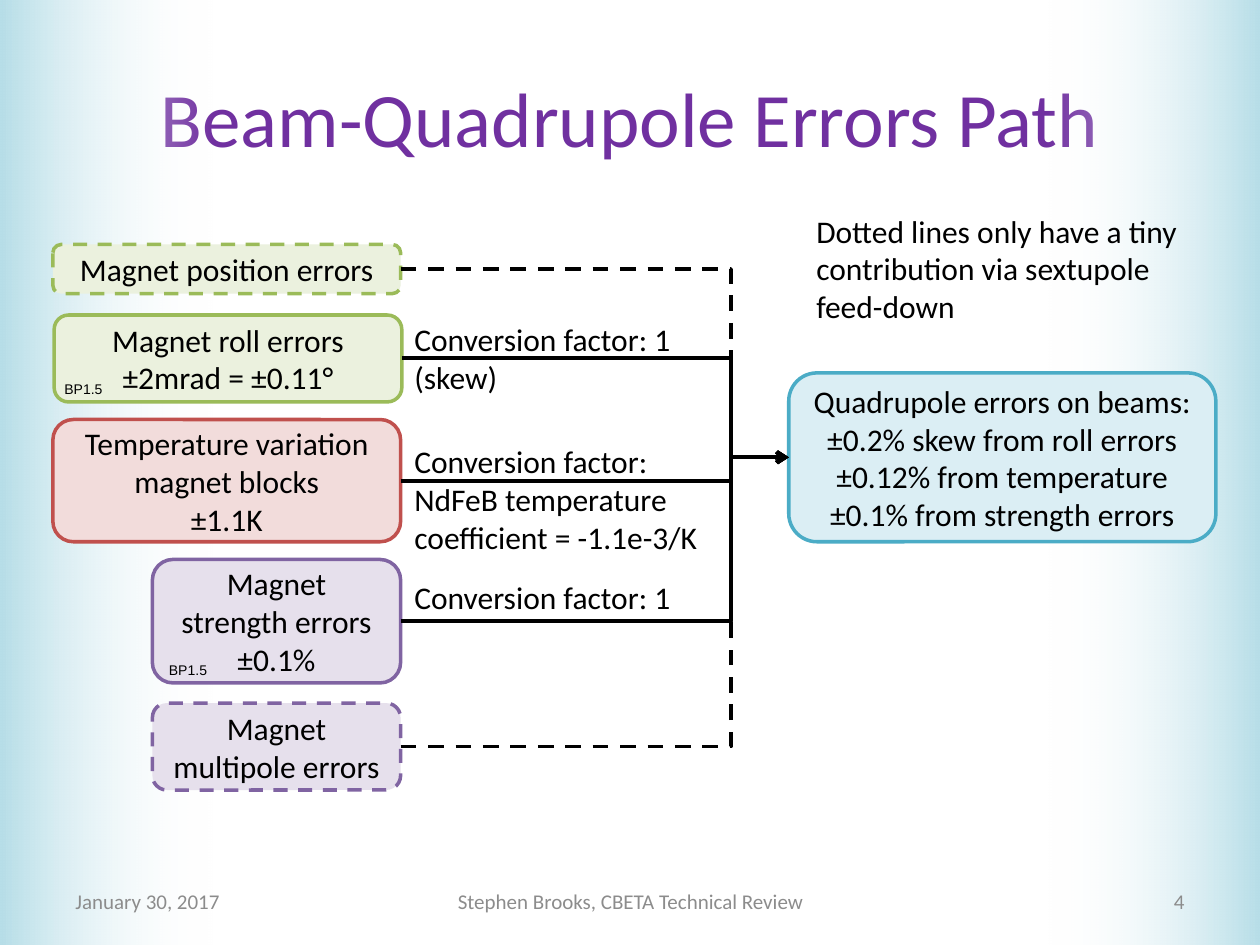
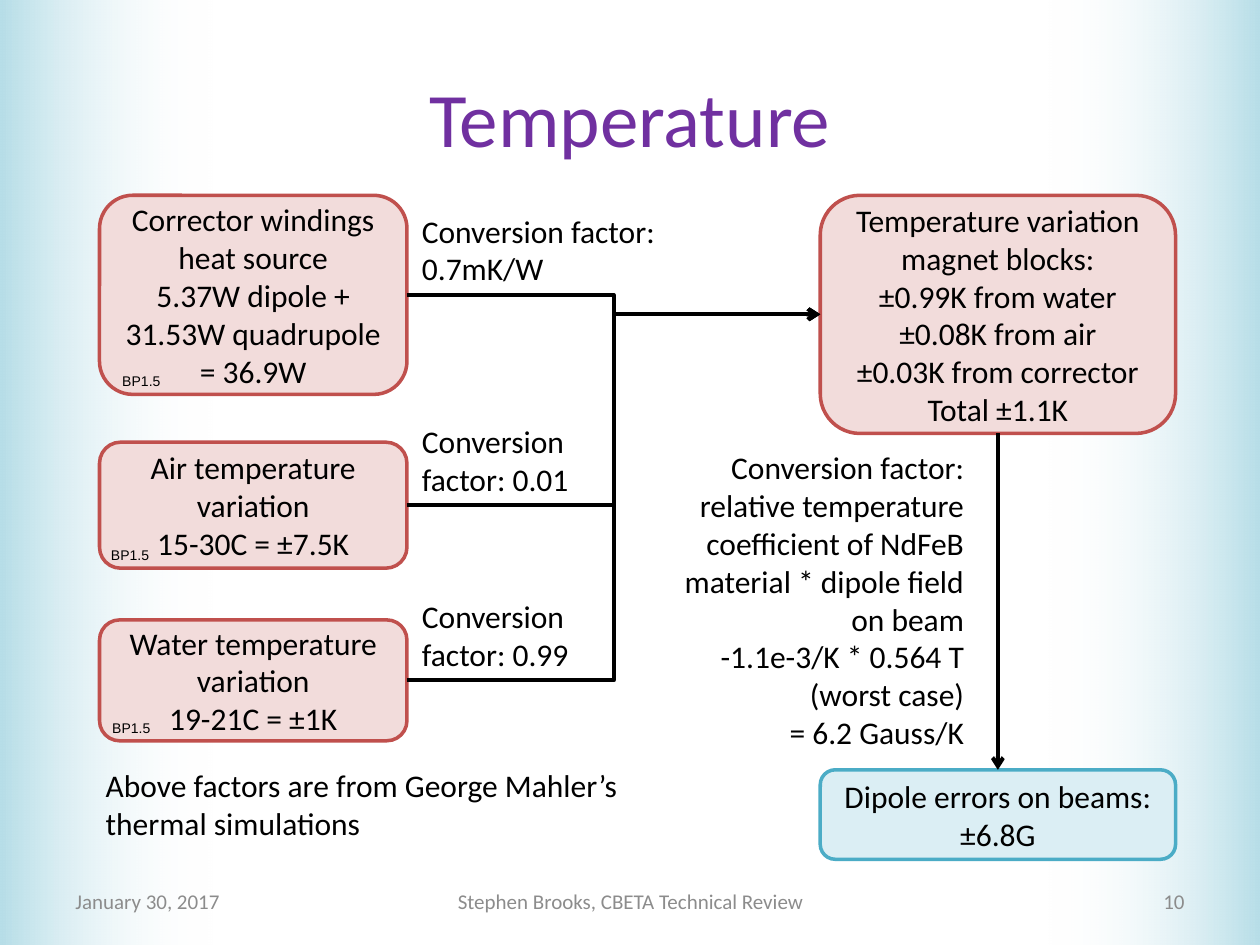
from lxml import etree
from pptx import Presentation
from pptx.dml.color import RGBColor
from pptx.enum import dml, shapes, text
from pptx.oxml import ns
from pptx.util import Inches, Pt

BLACK = RGBColor(0x00, 0x00, 0x00)
WHITE = RGBColor(0xFF, 0xFF, 0xFF)
PURPLE = RGBColor(0x70, 0x30, 0xA0)
GREY = RGBColor(0x8C, 0x8C, 0x8C)
BAND_BLUE = RGBColor(0xB7, 0xDE, 0xE8)
GREEN_PAIR = RGBColor(0xEB, 0xF1, 0xDE), RGBColor(0x9B, 0xBB, 0x59)
RED_PAIR = RGBColor(0xF2, 0xDC, 0xDB), RGBColor(0xC0, 0x50, 0x4D)
VIOLET_PAIR = RGBColor(0xE6, 0xE0, 0xEC), RGBColor(0x80, 0x64, 0xA2)
AQUA_PAIR = RGBColor(0xDB, 0xEE, 0xF4), RGBColor(0x4B, 0xAC, 0xC6)

LEFT, CENTER, RIGHT = text.PP_ALIGN.LEFT, text.PP_ALIGN.CENTER, text.PP_ALIGN.RIGHT
TOP_SITE, LEFT_SITE, BOTTOM_SITE, RIGHT_SITE = range(4)
BAND_WIDTH = 1.69
TAG_SIZE = 0.39, 0.21


def inches(box):
    """Turn a box in inches into lengths."""
    return [Inches(value) for value in box]


def write(frame, lines, size=18, align=LEFT, color=BLACK, font="Calibri"):
    """Fill a text frame with one paragraph for each line."""
    for index, line in enumerate(lines):
        para = frame.add_paragraph() if index else frame.paragraphs[0]
        para.alignment = align
        span = para.add_run()
        span.text = line
        span.font.size = Pt(size)
        span.font.name = font
        span.font.color.rgb = color


def add_band(page, left, rotation):
    """Draw a side band that fades towards the middle of the page."""
    band = page.shapes.add_shape(
        shapes.MSO_SHAPE.RECTANGLE, *inches((left, 0, BAND_WIDTH, 7.5)))
    band.rotation = rotation
    band.shadow.inherit = False
    band.line.fill.background()
    band.fill.gradient()
    band.fill.gradient_angle = 0
    for stop, color in zip(band.fill.gradient_stops, (BAND_BLUE, WHITE)):
        stop.color.rgb = color
    faded = list(band.element.iter(ns.qn("a:srgbClr")))[-1]
    etree.SubElement(faded, ns.qn("a:alpha"), val="0")


def add_label(page, box, lines, align=LEFT):
    """Place a free text label."""
    label = page.shapes.add_textbox(*inches(box))
    label.text_frame.word_wrap = True
    label.text_frame.auto_size = text.MSO_AUTO_SIZE.SHAPE_TO_FIT_TEXT
    write(label.text_frame, lines, align=align)


def add_footer(page, number):
    """Write the date, the event and the page number."""
    parts = ((0.5, 2.33, "January 30, 2017", LEFT),
             (3.42, 3.17, "Stephen Brooks, CBETA Technical Review", CENTER),
             (7.17, 2.33, str(number), RIGHT))
    for left, width, words, align in parts:
        footer = page.shapes.add_textbox(*inches((left, 6.95, width, 0.4)))
        footer.text_frame.word_wrap = True
        footer.text_frame.vertical_anchor = text.MSO_ANCHOR.MIDDLE
        write(footer.text_frame, [words], 12, align, GREY)


def add_page(deck, title, number):
    """Add a page with the shared bands, title and footer."""
    page = deck.slides.add_slide(deck.slide_layouts[5])
    add_band(page, 10 - BAND_WIDTH, 180)
    add_band(page, 0, 0)
    heading = page.shapes.title
    heading.left, heading.top, heading.width, heading.height = inches((0.5, 0.3, 9, 1.25))
    heading.text_frame.vertical_anchor = text.MSO_ANCHOR.MIDDLE
    write(heading.text_frame, [title], 44, CENTER, PURPLE)
    add_footer(page, number)
    return page


def add_tag(page, box, indent):
    """Put the small reference tag in the bottom left of a box."""
    left, top, _, height = box
    width, tall = TAG_SIZE
    tag = page.shapes.add_textbox(
        *inches((left + indent, top + height - tall, width, tall)))
    frame = tag.text_frame
    frame.margin_left = frame.margin_right = Inches(0.04)
    frame.margin_top = frame.margin_bottom = Inches(0.04)
    frame.word_wrap = False
    frame.auto_size = text.MSO_AUTO_SIZE.SHAPE_TO_FIT_TEXT
    write(frame, ["BP1.5"], 8, font="Arial")


def add_node(page, box, lines, colors, dashed=False, tag_indent=None):
    """Draw a rounded box of the diagram."""
    node = page.shapes.add_shape(shapes.MSO_SHAPE.ROUNDED_RECTANGLE, *inches(box))
    node.shadow.inherit = False
    node.fill.solid()
    node.fill.fore_color.rgb, node.line.color.rgb = colors
    node.line.width = Pt(2)
    if dashed:
        node.line.dash_style = dml.MSO_LINE.DASH
    node.text_frame.word_wrap = True
    node.text_frame.vertical_anchor = text.MSO_ANCHOR.MIDDLE
    write(node.text_frame, lines, align=CENTER)
    if tag_indent is not None:
        add_tag(page, box, tag_indent)
    return node


def add_arrow(page, source, target, trunk=None, dashed=False):
    """Join two nodes: sideways by way of a trunk, or else straight down."""
    kinds = shapes.MSO_CONNECTOR
    kind = kinds.STRAIGHT if trunk is None else kinds.ELBOW
    sites = (BOTTOM_SITE, TOP_SITE) if trunk is None else (RIGHT_SITE, LEFT_SITE)
    arrow = page.shapes.add_connector(kind, 0, 0, 0, 0)
    arrow.begin_connect(source, sites[0])
    arrow.end_connect(target, sites[1])
    arrow.line.color.rgb = BLACK
    arrow.line.width = Pt(2.25)
    if dashed:
        arrow.line.dash_style = dml.MSO_LINE.DASH
    outline = arrow.element.spPr
    etree.SubElement(outline.find(ns.qn("a:ln")), ns.qn("a:tailEnd"), type="arrow")
    etree.SubElement(outline, ns.qn("a:effectLst"))
    if trunk is not None:
        share = (Inches(trunk) - arrow.begin_x) / (arrow.end_x - arrow.begin_x)
        guides = next(outline.iter(ns.qn("a:avLst")))
        etree.SubElement(guides, ns.qn("a:gd"), name="adj1",
                         fmla=f"val {round(share * 100000)}")


def build_quadrupole_page(deck):
    """Show how magnet errors lead to quadrupole errors."""
    page = add_page(deck, "Beam-Quadrupole Errors Path", 4)
    result = add_node(page, (6.26, 2.96, 3.39, 1.34),
                      ["Quadrupole errors on beams:", "±0.2% skew from roll errors",
                       "±0.12% from temperature", "±0.1% from strength errors"], AQUA_PAIR)
    sources = (
        ((0.42, 1.94, 2.76, 0.39), ["Magnet position errors"], GREEN_PAIR, True, None),
        ((0.43, 2.5, 2.76, 0.69), ["Magnet roll errors", "±2mrad = ±0.11°"],
         GREEN_PAIR, False, 0.04),
        ((0.42, 3.33, 2.76, 0.97), ["Temperature variation magnet blocks", "±1.1K"],
         RED_PAIR, False, None),
        ((1.21, 4.44, 1.97, 0.98), ["Magnet strength errors", "±0.1%"],
         VIOLET_PAIR, False, 0.09),
        ((1.21, 5.58, 1.97, 0.69), ["Magnet multipole errors"], VIOLET_PAIR, True, None),
    )
    for box, lines, colors, dashed, indent in sources:
        source = add_node(page, box, lines, colors, dashed, indent)
        add_arrow(page, source, result, 5.8, dashed)
    add_label(page, (6.38, 1.63, 3.15, 1.01),
              ["Dotted lines only have a tiny contribution via sextupole feed-down"])
    add_label(page, (3.19, 2.49, 2.59, 0.71), ["Conversion factor: 1 (skew)"])
    add_label(page, (3.19, 3.46, 2.52, 1.01),
              ["Conversion factor:", "NdFeB temperature coefficient = -1.1e-3/K"])
    add_label(page, (3.19, 4.54, 2.67, 0.4), ["Conversion factor: 1"])


def build_temperature_page(deck):
    """Show how heat sources lead to dipole errors."""
    page = add_page(deck, "Temperature", 10)
    blocks = add_node(page, (6.51, 1.55, 2.82, 1.89),
                      ["Temperature variation magnet blocks:", "±0.99K from water",
                       "±0.08K from air", "±0.03K from corrector", "Total ±1.1K"], RED_PAIR)
    dipole = add_node(page, (6.51, 6.11, 2.82, 0.71),
                      ["Dipole errors on beams:", "±6.8G"], AQUA_PAIR)
    add_arrow(page, blocks, dipole)
    sources = (
        (1.55, 1.58, ["Corrector windings heat source",
                      "5.37W dipole + 31.53W quadrupole", "= 36.9W"], 0.14,
         2.44, ["Conversion factor:", "0.7mK/W"]),
        (3.51, 1, ["Air temperature variation", "15-30C = ±7.5K"], 0.05,
         1.41, ["Conversion factor: 0.01"]),
        (4.92, 0.96, ["Water temperature variation", "19-21C = ±1K"], 0.06,
         1.41, ["Conversion factor: 0.99"]),
    )
    for top, height, lines, indent, label_width, factor in sources:
        source = add_node(page, (0.79, top, 2.44, height), lines, RED_PAIR,
                          tag_indent=indent)
        add_arrow(page, source, blocks, 4.87)
        add_label(page, (3.25, top + height / 2 - 0.71, label_width, 0.71), factor)
    add_label(page, (5.31, 3.51, 2.44, 2.52),
              ["Conversion factor:",
               "relative temperature coefficient of NdFeB material * dipole field on beam",
               "-1.1e-3/K * 0.564 T (worst case)", "= 6.2 Gauss/K"], RIGHT)
    add_label(page, (0.74, 6.03, 4.41, 0.71),
              ["Above factors are from George Mahler’s thermal simulations"])


def main():
    """Build and save the deck."""
    deck = Presentation()
    deck.slide_width, deck.slide_height = Inches(10), Inches(7.5)
    build_quadrupole_page(deck)
    build_temperature_page(deck)
    deck.save("out.pptx")


if __name__ == "__main__":
    main()
